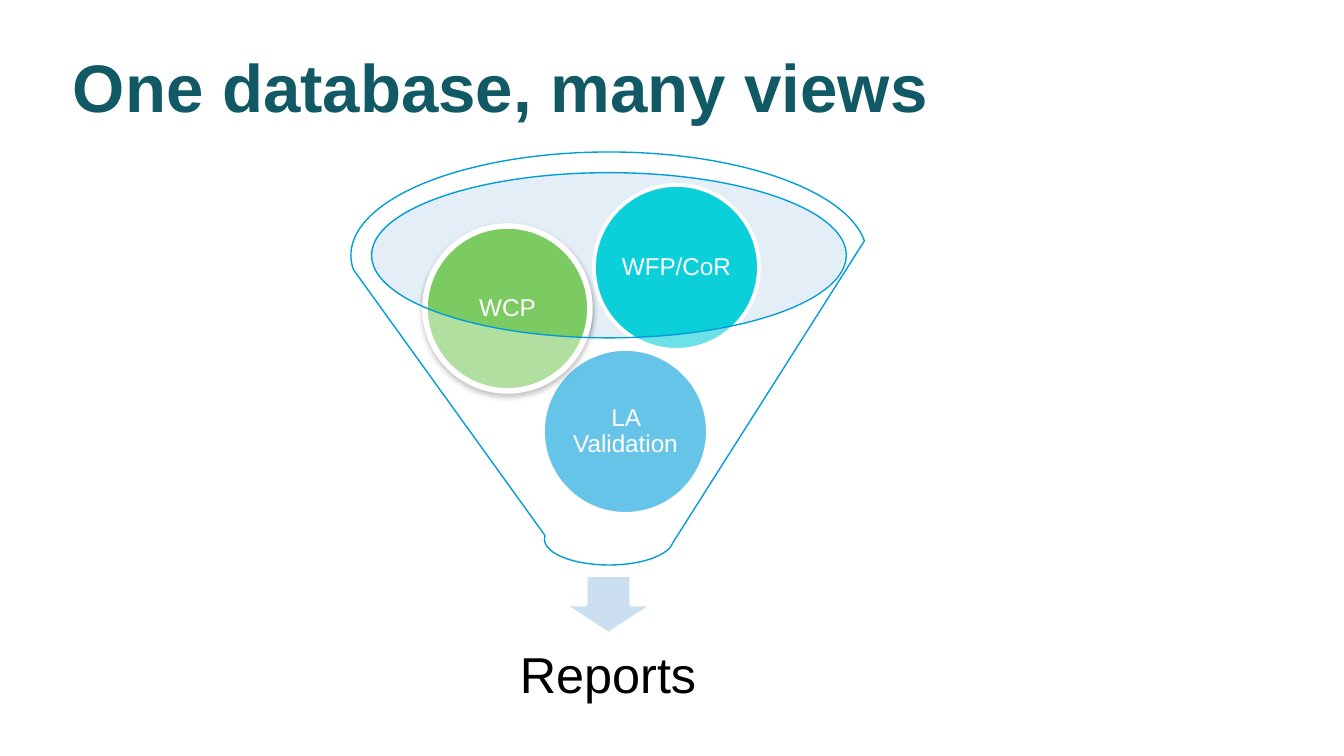
from lxml.etree import SubElement
from pptx import Presentation
from pptx.dml.color import RGBColor
from pptx.enum.shapes import MSO_SHAPE
from pptx.enum.text import MSO_ANCHOR, PP_ALIGN
from pptx.oxml.ns import qn
from pptx.util import Emu, Pt

EMU_PER_PX = 914400 / 134.4
CIRCLE_SIZE = 165
CIRCLES = [
    ("LA Validation", 543, 349, "009DD9", 2),
    ("WCP", 425, 226, "7CCA62", 3),
    ("WFP/CoR", 594, 185, "0BD0D9", 2),
]


def px(length):
    """Turn whole pixels into EMU."""
    return Emu(round(length * EMU_PER_PX))


def color(value):
    """Turn a hex string into a colour."""
    return RGBColor.from_string(value)


def set_alpha(color_element, percent):
    """Give a colour element an opacity in percent."""
    SubElement(color_element, qn("a:alpha"), val=str(percent * 1000))


def write_text(shape, text, size, ink, margin, align=PP_ALIGN.CENTER, bold=False, spacing=0.9):
    """Write one vertically centred paragraph into a shape."""
    frame = shape.text_frame
    frame.word_wrap = True
    frame.vertical_anchor = MSO_ANCHOR.MIDDLE
    frame.margin_left = frame.margin_right = px(margin)
    frame.margin_top = frame.margin_bottom = px(margin)
    para = frame.paragraphs[0]
    para.text = text
    para.alignment = align
    para.line_spacing = spacing
    para.font.name = "Arial"
    para.font.size = Pt(size)
    para.font.bold = bold
    para.font.color.rgb = color(ink)


def add_text(page, place, text, **style):
    """Add a text box."""
    box = page.shapes.add_textbox(*map(px, place))
    write_text(box, text, **style)


def add_figure(page, preset, place, fill, line=None, width=1, opacity=100):
    """Add a preset shape with a flat fill and an optional outline."""
    shape = page.shapes.add_shape(preset, *map(px, place))
    shape.shadow.inherit = False
    shape.fill.solid()
    shape.fill.fore_color.rgb = color(fill)
    if opacity < 100:
        set_alpha(shape.fill._xPr.find(qn("a:solidFill"))[0], opacity)
    if line:
        shape.line.color.rgb = color(line)
        shape.line.width = Pt(width)
    else:
        shape.line.fill.background()
    return shape


def add_shadow(shape):
    """Add a soft shadow below a shape."""
    effects = shape._element.spPr.find(qn("a:effectLst"))
    shadow = SubElement(effects, qn("a:outerShdw"), blurRad=str(Pt(3.1)),
                        dist=str(Pt(1.6)), dir="5400000", rotWithShape="0")
    set_alpha(SubElement(shadow, qn("a:srgbClr"), val="000000"), 38)


def add_circle(page, label, left, top, fill, width):
    """Add a labelled circle with a white outline."""
    place = (left, top, CIRCLE_SIZE, CIRCLE_SIZE)
    circle = add_figure(page, MSO_SHAPE.OVAL, place, fill, "FFFFFF", width)
    write_text(circle, label, size=13, ink="FFFFFF", margin=3)
    return circle


def main():
    """Build the slide and save it."""
    deck = Presentation()
    deck.slide_width, deck.slide_height = px(1344), px(756)
    page = deck.slides.add_slide(deck.slide_layouts[6])

    add_text(page, (60, 51, 1210, 70), "One database, many views", size=36,
             ink="115964", margin=13, align=PP_ALIGN.LEFT, bold=True, spacing=1.0)
    add_figure(page, MSO_SHAPE.OVAL, (371, 172, 474, 165), "BDD5ED", opacity=40)
    add_figure(page, MSO_SHAPE.DOWN_ARROW, (563, 575, 91, 59), "CCDFF1", "FFFFFF", 2)
    add_text(page, (387, 622, 442, 110), "Reports", size=27, ink="000000", margin=28)
    circles = {circle[0]: add_circle(page, *circle) for circle in CIRCLES}
    add_shadow(circles["WCP"])
    add_figure(page, MSO_SHAPE.FUNNEL, (351, 152, 516, 413), "FFFFFF", "009DD9", 0.75, 40)

    deck.save("out.pptx")


if __name__ == "__main__":
    main()
